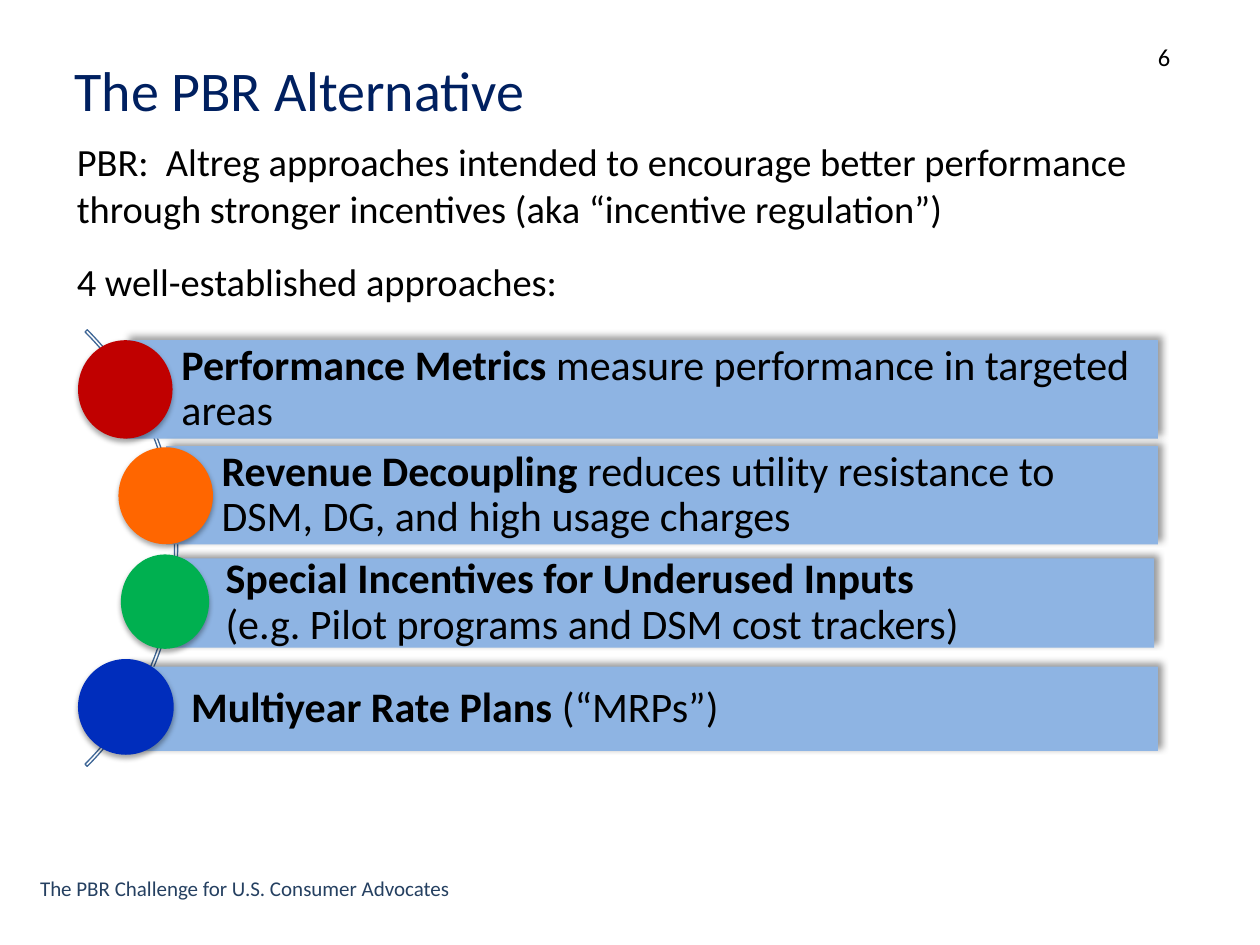
from lxml.etree import SubElement
from pptx import Presentation
from pptx.dml.color import RGBColor
from pptx.enum.shapes import MSO_SHAPE as Shape
from pptx.enum.text import MSO_ANCHOR as Anchor, MSO_AUTO_SIZE as AutoSize, PP_ALIGN as Align
from pptx.oxml.ns import qn
from pptx.util import Pt

TITLE = "The PBR Alternative"
INTRO = [
    "PBR:  Altreg approaches intended to encourage better performance "
    "through stronger incentives (aka “incentive regulation”)",
    "4 well-established approaches:",
]
FOOTER = "The PBR Challenge for U.S. Consumer Advocates"
PAGE_NUMBER = "6"

# name, separator, detail, text inset, bar box, circle box, circle colour
APPROACHES = [
    ("Performance Metrics", " ", "measure performance in targeted areas", 31.7,
     (72, 194.4, 589.7, 56.2), (44.6, 194.4, 54, 56.2), "C00000"),
    ("Revenue Decoupling", " ",
     "reduces utility resistance to DSM, DG, and high usage charges", 31.7,
     (95, 254.9, 566.7, 56.2), (67.7, 255.6, 54, 55.4), "FF6600"),
    ("Special Incentives for Underused Inputs", "\n",
     "(e.g. Pilot programs and DSM cost trackers)", 31.7,
     (97.2, 319, 562.3, 51.1), (69.1, 316.8, 50.4, 54), "00B050"),
    ("Multiyear Rate Plans", " ", "(“MRPs”)", 37.2,
     (72, 380.9, 589.7, 48.2), (44.6, 376.6, 54.7, 54.7), "002DBC"),
]
# opacity percent, blur, distance, direction in degrees
BAR_SHADOW = (40, 4, 3, 315)
CIRCLE_SHADOW = (35, 3.1, 1.8, 90)


def colour(hex_value):
    return RGBColor.from_string(hex_value)


def box(values):
    return [Pt(value) for value in values]


def style(font, size, hex_value, bold=False):
    font.name = "Calibri"
    font.size = Pt(size)
    font.bold = bold
    font.color.rgb = colour(hex_value)


def add_shadow(shape, opacity, blur, distance, direction):
    shape.shadow.inherit = False
    effects = shape._element.spPr.find(qn("a:effectLst"))
    shadow = SubElement(effects, qn("a:outerShdw"), blurRad=str(Pt(blur)),
                        dist=str(Pt(distance)), dir=str(direction * 60000),
                        rotWithShape="0")
    tint = SubElement(shadow, qn("a:srgbClr"), val="000000")
    SubElement(tint, qn("a:alpha"), val=str(opacity * 1000))


def add_filled(slide, kind, bounds, fill, shadow):
    shape = slide.shapes.add_shape(kind, *box(bounds))
    shape.fill.solid()
    shape.fill.fore_color.rgb = colour(fill)
    shape.line.fill.background()
    add_shadow(shape, *shadow)
    return shape


def add_text(slide, bounds, paragraphs, size, hex_value="000000"):
    frame = slide.shapes.add_textbox(*box(bounds)).text_frame
    frame.word_wrap = True
    frame.text = "\n".join(paragraphs)
    for paragraph in frame.paragraphs:
        style(paragraph.runs[0].font, size, hex_value)
    return frame


def add_title(slide):
    title = slide.shapes.title
    title.left, title.top, title.width, title.height = box((35.3, 34.6, 648, 32.4))
    frame = title.text_frame
    frame.text = TITLE
    frame.auto_size = AutoSize.NONE
    frame.vertical_anchor = Anchor.MIDDLE
    frame.paragraphs[0].alignment = Align.LEFT
    style(frame.paragraphs[0].runs[0].font, 32, "002060")


def add_arc(slide):
    arc = slide.shapes.add_shape(Shape.BLOCK_ARC, *box((-251.3, 136.8, 352.8, 352.8)))
    for index, value in enumerate((189, 27, 0.005)):
        arc.adjustments[index] = value
    arc.fill.background()
    arc.line.color.rgb = colour("3F6797")
    arc.line.width = Pt(0.75)
    arc.shadow.inherit = False


def add_approach(slide, name, separator, detail, inset, bar_box, circle_box, fill):
    bar = add_filled(slide, Shape.RECTANGLE, bar_box, "8EB4E3", BAR_SHADOW)
    frame = bar.text_frame
    frame.word_wrap = True
    frame.vertical_anchor = Anchor.MIDDLE
    frame.margin_left = Pt(inset)
    frame.margin_top = frame.margin_right = frame.margin_bottom = Pt(5)
    paragraph = frame.paragraphs[0]
    paragraph.alignment = Align.LEFT
    paragraph.line_spacing = 0.9
    # A line break becomes its own element between the two runs.
    paragraph.text = name + ("\v" if separator == "\n" else separator)
    paragraph.add_run().text = detail
    for run, bold in zip(paragraph.runs, (True, False)):
        style(run.font, 24, "000000", bold)
    add_filled(slide, Shape.OVAL, circle_box, fill, CIRCLE_SHADOW)


def main():
    presentation = Presentation()
    presentation.slide_width, presentation.slide_height = Pt(720), Pt(540)
    slide = presentation.slides.add_slide(presentation.slide_layouts[5])

    add_text(slide, (654.5, 20.2, 59, 18), [PAGE_NUMBER], 14)
    add_title(slide)
    intro = add_text(slide, (18.7, 75.6, 711.4 - 18.7, 110), INTRO, 22)
    intro.margin_left = Pt(25.2)
    intro.paragraphs[1].space_before = Pt(15.5)

    add_arc(slide)
    for approach in APPROACHES:
        add_approach(slide, *approach)

    add_text(slide, (15.8, 496.8, 349.2, 25.9), [FOOTER], 12, "254061")
    presentation.save("out.pptx")


if __name__ == "__main__":
    main()
